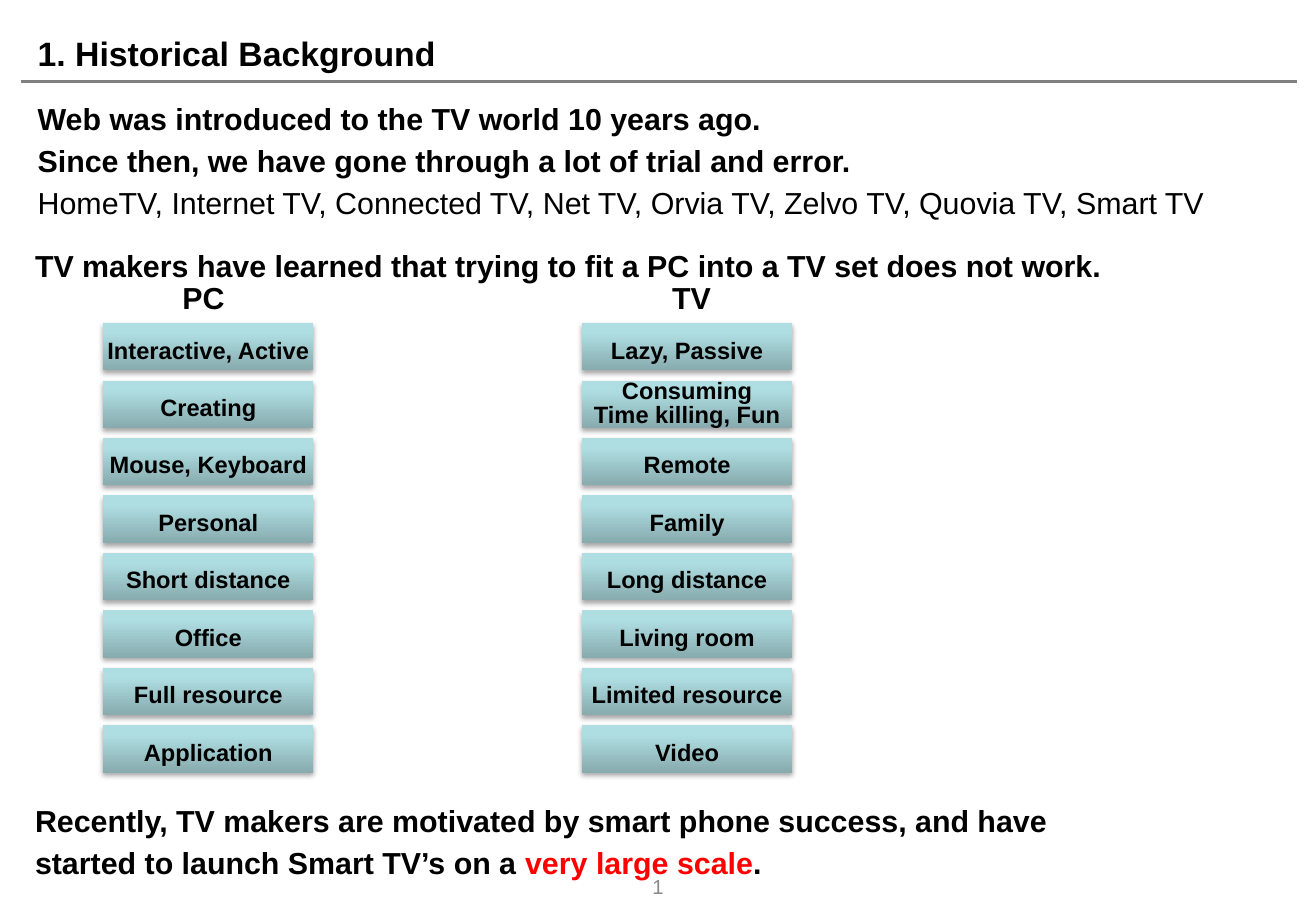
from copy import deepcopy
from dataclasses import dataclass
from typing import Any

from lxml import etree
from pptx import Presentation
from pptx.dml.color import RGBColor
from pptx.enum.shapes import MSO_CONNECTOR, MSO_SHAPE
from pptx.enum.text import MSO_ANCHOR, MSO_AUTO_SIZE, PP_ALIGN
from pptx.oxml.ns import qn
from pptx.util import Inches, Pt

LEFT, CENTER = PP_ALIGN.LEFT, PP_ALIGN.CENTER
TOP, MIDDLE = MSO_ANCHOR.TOP, MSO_ANCHOR.MIDDLE
NO_FIT = MSO_AUTO_SIZE.NONE
RECTANGLE, STRAIGHT = MSO_SHAPE.RECTANGLE, MSO_CONNECTOR.STRAIGHT

COLORS = {
    "text": "000000", "accent": "FF0000", "rule": "808080", "number": "898989",
    "dark": "87ABAE", "light": "AFDEE2", "lightest": "AFE0E4",
}
GRADIENT = [(0, "dark"), (0.8, "light"), (1, "lightest")]
TOP_ROW, LAST_ROW = 2.66, 5.97
BOX_WIDTH, BOX_HEIGHT = 1.73, 0.39
TIGHT = {"margin_left": 0, "margin_top": 0, "margin_right": 0, "margin_bottom": 0}


@dataclass
class Span:
    text: str
    color: str = "text"
    bold: bool = True


@dataclass
class Column:
    heading: str
    left: float
    heading_left: float
    heading_width: float
    labels: list[str]


COLUMNS = [
    Column("PC", 0.85, 1.4, 0.55, [
        "Interactive, Active", "Creating", "Mouse, Keyboard", "Personal",
        "Short distance", "Office", "Full resource", "Application"]),
    Column("TV", 4.79, 5.43, 0.52, [
        "Lazy, Passive", "Consuming\nTime killing, Fun", "Remote", "Family",
        "Long distance", "Living room", "Limited resource", "Video"]),
]


def color(name: str) -> RGBColor:
    """Return the named colour."""
    return RGBColor.from_string(COLORS[name])


def apply(target: Any, values: dict[str, Any]) -> None:
    """Set each attribute given in the format values."""
    for name, value in values.items():
        setattr(target, name, value)


def write(shape: Any, paragraphs: list[list[Span]], size: float = 18,
          align: Any = LEFT, spacing: Any = 1.15, anchor: Any = TOP,
          **frame_format: Any) -> None:
    """Fill a shape with formatted paragraphs."""
    frame = shape.text_frame
    apply(frame, {"word_wrap": True, "auto_size": NO_FIT,
                  "vertical_anchor": anchor} | frame_format)
    for index, spans in enumerate(paragraphs):
        para = frame.add_paragraph() if index else frame.paragraphs[0]
        apply(para, {"alignment": align, "line_spacing": spacing,
                     "space_before": Pt(0)})
        for span in spans:
            run = para.add_run()
            run.text = span.text
            apply(run.font, {"name": "Arial", "size": Pt(size), "bold": span.bold})
            run.font.color.rgb = color(span.color)


def place(shape: Any, left: float, top: float, width: float, height: float) -> Any:
    """Move and size a shape in inches."""
    apply(shape, {"left": Inches(left), "top": Inches(top),
                  "width": Inches(width), "height": Inches(height)})
    return shape


def add_text(page: Any, position: tuple[float, float, float, float],
             paragraphs: list[list[Span]], **text_format: Any) -> Any:
    """Add a text box."""
    box = page.shapes.add_textbox(*map(Inches, position))
    write(box, paragraphs, **text_format)
    return box


def add_rule(page: Any) -> None:
    """Draw the line under the title."""
    rule = page.shapes.add_connector(
        STRAIGHT, Inches(0.17), Inches(0.67), Inches(10.67), Inches(0.67))
    rule.line.color.rgb = color("rule")
    rule.line.width = Pt(2)
    etree.SubElement(rule._element.spPr, qn("a:effectLst"))


def add_page_number(page: Any) -> None:
    """Add the slide number as a field."""
    box = add_text(page, (4.15, 7.1, 2.53, 0.4), [[Span("1", "number", False)]],
                   size=12, align=CENTER, spacing=1.0, anchor=MIDDLE)
    run = box.text_frame.paragraphs[0].runs[0]._r
    field = etree.Element(qn("a:fld"), type="slidenum",
                          id="{B6F15528-21DE-4FAA-801E-634DDDAF4B2B}")
    run.addprevious(field)
    field.extend(list(run))
    run.getparent().remove(run)


def add_label(page: Any, left: float, top: float, label: str) -> None:
    """Draw one shaded comparison box."""
    box = page.shapes.add_shape(
        RECTANGLE, *map(Inches, (left, top, BOX_WIDTH, BOX_HEIGHT)))
    box.line.fill.background()
    box.fill.gradient()
    box.fill.gradient_angle = 90
    properties = box._element.spPr
    stops = properties.find(f"{qn('a:gradFill')}/{qn('a:gsLst')}")
    stops.append(deepcopy(stops[0]))
    for stop, (position, name) in zip(box.fill.gradient_stops, GRADIENT):
        stop.position = position
        stop.color.rgb = color(name)
    box.shadow.inherit = False
    shadow = etree.SubElement(
        properties.find(qn("a:effectLst")), qn("a:outerShdw"), blurRad="40000",
        dist="23000", dir="5400000", rotWithShape="0")
    shade = etree.SubElement(shadow, qn("a:srgbClr"), val=COLORS["text"])
    etree.SubElement(shade, qn("a:alpha"), val="35000")
    lines = label.split("\n")
    write(box, [[Span(line)] for line in lines], size=14, align=CENTER,
          spacing=Pt(14) if len(lines) > 1 else 1.2, anchor=MIDDLE, **TIGHT)


def add_column(page: Any, column: Column) -> None:
    """Draw a heading and its evenly spaced boxes."""
    add_text(page, (column.heading_left, 2.25, column.heading_width, 0.4),
             [[Span(column.heading)]], align=CENTER, spacing=1.0, word_wrap=False)
    pitch = (LAST_ROW - TOP_ROW) / (len(column.labels) - 1)
    for row, label in enumerate(column.labels):
        add_label(page, column.left, TOP_ROW + row * pitch, label)


def main() -> None:
    """Build and save the slide."""
    deck = Presentation()
    apply(deck, {"slide_width": Inches(10.83), "slide_height": Inches(7.5)})
    page = deck.slides.add_slide(deck.slide_layouts[1])
    add_rule(page)
    add_page_number(page)
    title = place(page.shapes.title, 0.21, 0.13, 9.38, 0.56)
    write(title, [[Span("1. Historical Background")]], size=20, anchor=MIDDLE)
    body = place(page.placeholders[1], 0.21, 0.73, 10.41, 1.21)
    write(body, [
        [Span("Web was introduced to the TV world 10 years ago.")],
        [Span("Since then, we have gone through a lot of trial and error.")],
        [Span("HomeTV, Internet TV, Connected TV, Net TV, Orvia TV, Zelvo TV, "
              "Quovia TV, Smart TV", bold=False)],
    ])
    for para in body.text_frame.paragraphs:
        properties = para._p.get_or_add_pPr()
        properties.set("marL", "0")
        properties.set("indent", "0")
        etree.SubElement(properties, qn("a:buNone"))
    for column in COLUMNS:
        add_column(page, column)
    add_text(page, (0.19, 1.94, 9.87, 0.43), [[Span(
        "TV makers have learned that trying to fit a PC into a TV set does not work.")]])
    add_text(page, (0.19, 6.51, 9.4, 0.77), [[
        Span("Recently, TV makers are motivated by smart phone success, "
             "and have started to launch Smart TV’s on a "),
        Span("very large scale", "accent"), Span(".")]])
    deck.save("out.pptx")


if __name__ == "__main__":
    main()
